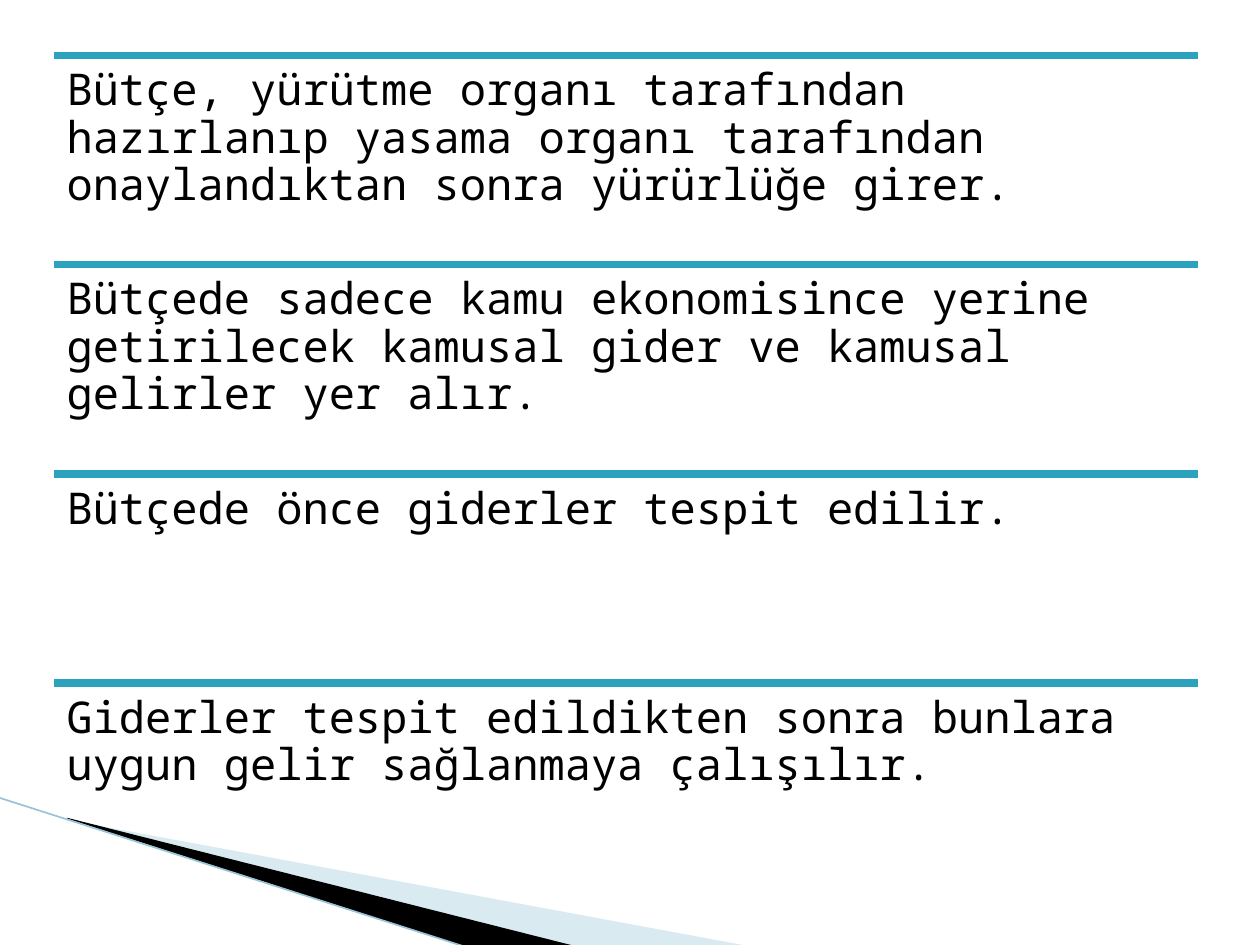
from pptx import Presentation
from pptx.dml.color import RGBColor
from pptx.enum.shapes import MSO_CONNECTOR as Connector
from pptx.enum.text import MSO_ANCHOR as Anchor
from pptx.oxml.ns import qn
from pptx.util import Inches, Pt
from lxml.etree import SubElement

BLACK = RGBColor(0x00, 0x00, 0x00)
TEAL = RGBColor(0x2D, 0xA2, 0xBF)
PALE_BLUE = RGBColor(0xA0, 0xCB, 0xDC)
EDGE_BLUE = RGBColor(0x97, 0xC5, 0xD8)

STATEMENTS = [
    "Bütçe, yürütme organı tarafından hazırlanıp yasama organı tarafından "
    "onaylandıktan sonra yürürlüğe girer.",
    "Bütçede sadece kamu ekonomisince yerine getirilecek kamusal gider ve "
    "kamusal gelirler yer alır.",
    "Bütçede önce giderler tespit edilir.",
    "Giderler tespit edildikten sonra bunlara uygun gelir sağlanmaya çalışılır.",
]
LEFT, TOP, WIDTH, ROW_HEIGHT = 0.43, 0.44, 9.08, 1.66


class SlideBuilder:
    font_name = "Noto Sans Mono"
    font_size = Pt(25)
    inset = Inches(0.1)

    def __init__(self, page):
        self.page = page

    def wedge(self, points, color, opacity=100):
        corners = [(Inches(x), Inches(y)) for x, y in points]
        builder = self.page.shapes.build_freeform(*corners[0])
        builder.add_line_segments(corners[1:], close=True)
        shape = builder.convert_to_shape()
        shape.shadow.inherit = False
        shape.line.fill.background()
        shape.fill.solid()
        shape.fill.fore_color.rgb = color
        if opacity < 100:
            tint = shape.fill._xPr.find(qn("a:solidFill"))[0]
            SubElement(tint, qn("a:alpha"), val=str(opacity * 1000))

    def rule(self, start, end, color, weight):
        ends = [Inches(value) for value in (*start, *end)]
        line = self.page.shapes.add_connector(Connector.STRAIGHT, *ends)
        line.line.color.rgb = color
        line.line.width = Pt(weight)
        SubElement(line._element.spPr, qn("a:effectLst"))

    def statement(self, text, left, top, width, height):
        box = self.page.shapes.add_textbox(
            Inches(left), Inches(top), Inches(width), Inches(height))
        frame = box.text_frame
        frame.word_wrap = True
        frame.vertical_anchor = Anchor.TOP
        frame.margin_left = frame.margin_right = self.inset
        frame.margin_top = frame.margin_bottom = self.inset
        para = frame.paragraphs[0]
        para.text = text
        para.line_spacing = 0.9
        para.font.name = self.font_name
        para.font.size = self.font_size
        para.font.color.rgb = BLACK


def main():
    deck = Presentation()
    deck.slide_width, deck.slide_height = Inches(10), Inches(7.5)
    slide = SlideBuilder(deck.slides.add_slide(deck.slide_layouts[6]))

    slide.wedge([(0.55, 6.51), (5.95, 7.51), (4.56, 7.51), (0.55, 6.5)],
                PALE_BLUE, opacity=40)
    slide.wedge([(0.53, 6.49), (4.57, 7.51), (3.72, 7.52), (0.54, 6.5)], BLACK)
    slide.rule((-0.01, 6.33), (3.71, 7.52), EDGE_BLUE, 0.95)

    for index, text in enumerate(STATEMENTS):
        top = TOP + index * ROW_HEIGHT
        slide.rule((LEFT, top), (LEFT + WIDTH, top), TEAL, 4.33)
        slide.statement(text, LEFT, top, WIDTH, ROW_HEIGHT)

    deck.save("out.pptx")


if __name__ == "__main__":
    main()
